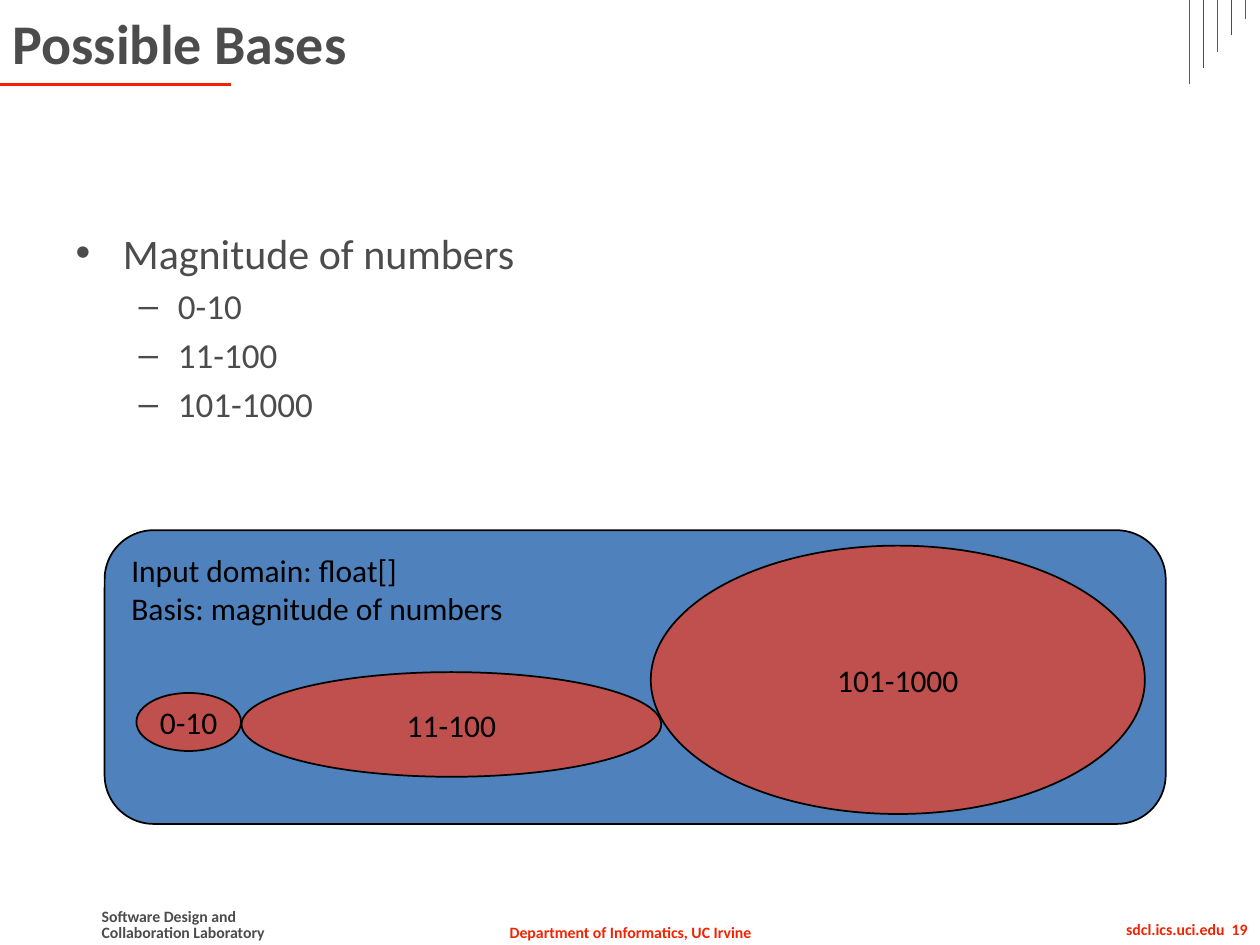
from dataclasses import dataclass

from lxml.etree import SubElement
from pptx import Presentation
from pptx.dml.color import RGBColor
from pptx.enum.shapes import MSO_CONNECTOR, MSO_SHAPE
from pptx.enum.text import MSO_ANCHOR, MSO_AUTO_SIZE, PP_ALIGN
from pptx.oxml.ns import qn
from pptx.util import Cm, Pt


@dataclass(frozen=True)
class Theme:
    font: str = "Calibri"
    gray: str = "4C4C4C"
    red: str = "F32200"
    black: str = "000000"
    domain: str = "4F81BD"
    subset: str = "C0504D"
    title: int = 32
    levels: tuple = (24, 20)
    label: int = 18
    footer: int = 9


class SlideBuilder:
    """Holds the theme and the current slide."""

    def __init__(self, s, theme):
        self.s, self.theme = s, theme

    def format(self, p, size, color, bold=False, align=PP_ALIGN.LEFT):
        p.alignment = align
        for r in p.runs:
            r.font.name = self.theme.font
            r.font.size = Pt(size)
            r.font.bold = bold
            r.font.color.rgb = RGBColor.from_string(color)

    def place(self, sp, box):
        sp.left, sp.top, sp.width, sp.height = map(Cm, box)

    def title(self, text, box):
        sp = self.s.shapes.title
        self.place(sp, box)
        tf = sp.text_frame
        tf.text = text
        tf.vertical_anchor = MSO_ANCHOR.MIDDLE
        self.format(tf.paragraphs[0], self.theme.title, self.theme.gray, bold=True)

    def bullets(self, items, box):
        """Fill the body placeholder from (level, text) pairs."""
        sp = self.s.placeholders[1]
        self.place(sp, box)
        tf = sp.text_frame
        tf.auto_size = MSO_AUTO_SIZE.NONE
        tf.text = "\n".join(text for _, text in items)
        for p, (level, _) in zip(tf.paragraphs, items):
            p.level = level
            self.format(p, self.theme.levels[level], self.theme.gray)

    def footer(self, text, box, color, align=PP_ALIGN.LEFT, wrap=False):
        sp = self.s.shapes.add_textbox(*map(Cm, box))
        tf = sp.text_frame
        tf.word_wrap = wrap
        tf.text = text
        self.format(tf.paragraphs[0], self.theme.footer, color, bold=True, align=align)

    def line(self, x1, y1, x2, y2, color, width):
        ln = self.s.shapes.add_connector(MSO_CONNECTOR.STRAIGHT, *map(Cm, (x1, y1, x2, y2)))
        ln.line.color.rgb = RGBColor.from_string(color)
        ln.line.width = Pt(width)
        SubElement(ln._element.spPr, qn("a:effectLst"))

    def group(self):
        return self.s.shapes.add_group_shape()

    def shape(self, group, kind, text, box, fill, align=PP_ALIGN.CENTER,
              anchor=MSO_ANCHOR.MIDDLE):
        sp = group.shapes.add_shape(kind, *map(Cm, box))
        sp.shadow.inherit = False
        sp.fill.solid()
        sp.fill.fore_color.rgb = RGBColor.from_string(fill)
        sp.line.color.rgb = RGBColor.from_string(self.theme.black)
        sp.line.width = Pt(1)
        tf = sp.text_frame
        tf.word_wrap = False
        tf.vertical_anchor = anchor
        tf.text = text
        self.format(tf.paragraphs[0], self.theme.label, self.theme.black, align=align)


def main():
    prs = Presentation()
    prs.slide_width, prs.slide_height = Cm(25.4), Cm(19.05)
    t = Theme()
    b = SlideBuilder(prs.slides.add_slide(prs.slide_layouts[1]), t)

    b.footer("Department of Informatics, UC Irvine", (9.98, 18.47, 5.46, 0.63),
             t.red, PP_ALIGN.CENTER)
    b.footer("Collaboration Laboratory", (1.8, 18.47, 3.89, 0.63), t.gray)
    b.footer("Software Design and", (1.8, 18.16, 3.28, 0.63), t.gray)
    b.footer("sdcl.ics.uci.edu  19", (19.91, 18.42, 5.49, 0.63),
             t.red, PP_ALIGN.RIGHT, wrap=True)

    b.line(0, 1.7, 4.65, 1.7, t.red, 1.5)
    for i in range(5):
        x = 23.98 + 0.28 * i
        b.line(x, 1.7 - 0.33 * i, x, 0, t.gray if i % 2 else t.red, 0.5)

    b.title("Possible Bases", (0, 0, 22.86, 1.7))
    b.bullets([(0, "Magnitude of numbers"), (1, "0-10"), (1, "11-100"), (1, "101-1000")],
              (1.27, 4.45, 22.71, 12.57))

    diagram = b.group()
    b.shape(diagram, MSO_SHAPE.ROUNDED_RECTANGLE,
            "Input domain: float[]\vBasis: magnitude of numbers",
            (2.11, 10.69, 21.39, 5.92), t.domain, PP_ALIGN.LEFT, MSO_ANCHOR.TOP)
    for text, box in (
        ("11-100", (4.87, 13.55, 8.46, 2.11)),
        ("0-10", (2.75, 13.97, 2.11, 1.17)),
        ("101-1000", (13.12, 11, 9.96, 5.41)),
    ):
        b.shape(diagram, MSO_SHAPE.OVAL, text, box, t.subset)

    prs.save("out.pptx")


if __name__ == "__main__":
    main()
